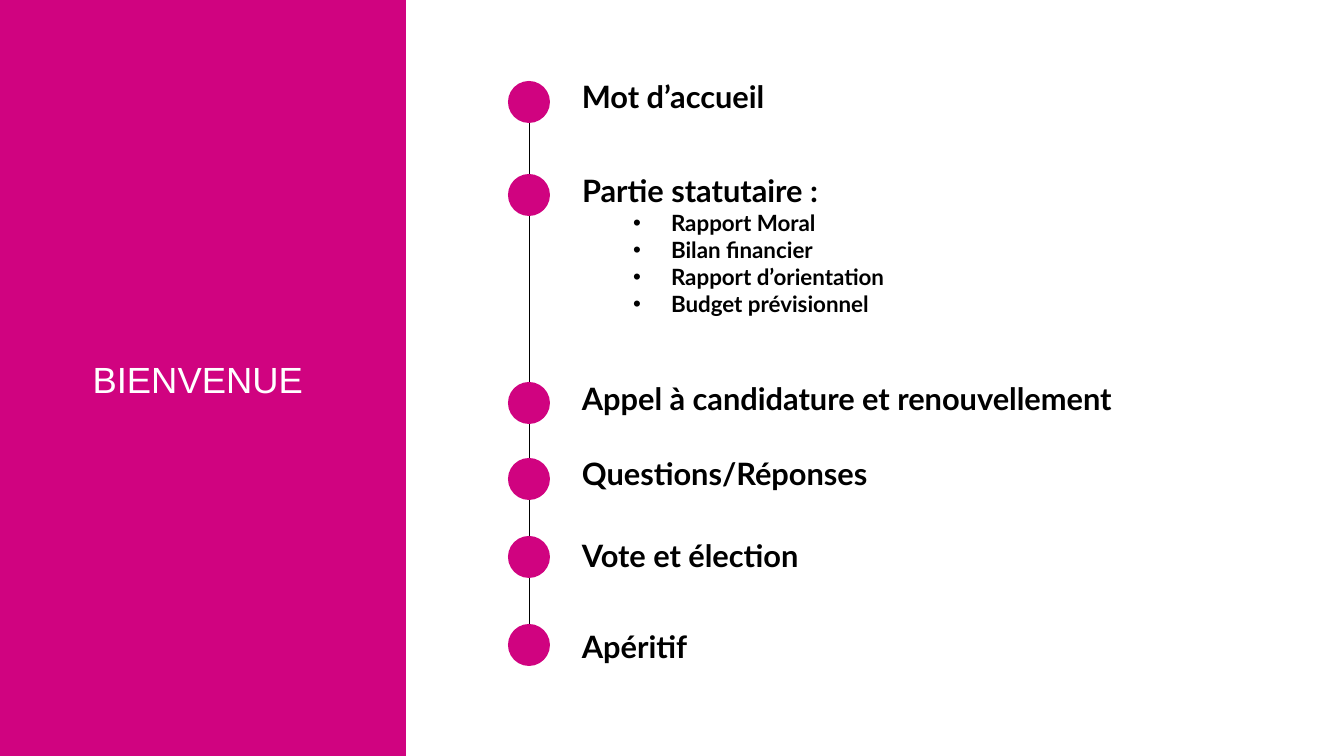
from dataclasses import dataclass

from lxml.etree import SubElement
from pptx import Presentation
from pptx.dml.color import RGBColor
from pptx.enum.shapes import MSO_CONNECTOR, MSO_SHAPE
from pptx.enum.text import MSO_ANCHOR, MSO_AUTO_SIZE, PP_ALIGN
from pptx.oxml.ns import qn
from pptx.shapes.autoshape import Shape
from pptx.slide import Slide
from pptx.text.text import _Paragraph as Paragraph
from pptx.util import Emu, Pt

MAGENTA = RGBColor(0xD0, 0x03, 0x80)
WHITE = RGBColor(0xFF, 0xFF, 0xFF)
BLACK = RGBColor(0x00, 0x00, 0x00)

SLIDE_WIDTH, SLIDE_HEIGHT = 1344, 756
PANEL_WIDTH = 406
DOT_LEFT, DOT_SIZE = 508, 42
TEXT_LEFT, TEXT_WIDTH = 572, 653
HEADING_HEIGHT, BULLET_HEIGHT = 33, 27
BULLET_MARGIN, BULLET_HANG = 89, 38


@dataclass(frozen=True)
class AgendaItem:
    heading: str
    dot_top: int
    text_top: int
    bullets: tuple[str, ...] = ()


AGENDA = (
    AgendaItem("Mot d’accueil", 81, 82),
    AgendaItem("Partie statutaire :", 174, 176, (
        "Rapport Moral", "Bilan financier",
        "Rapport d’orientation", "Budget prévisionnel")),
    AgendaItem("Appel à candidature et renouvellement", 382, 384),
    AgendaItem("Questions/Réponses", 458, 459),
    AgendaItem("Vote et élection", 536, 541),
    AgendaItem("Apéritif", 624, 632),
)


def px(length: int) -> Emu:
    return Emu(round(length * 914400 / 100.8))


def place(shape: Shape, left: int, top: int, width: int, height: int) -> None:
    shape.left, shape.top = px(left), px(top)
    shape.width, shape.height = px(width), px(height)


def add_filled(slide: Slide, kind: MSO_SHAPE, left: int, top: int,
               width: int, height: int) -> Shape:
    shape = slide.shapes.add_shape(kind, px(left), px(top), px(width), px(height))
    shape.shadow.inherit = False
    shape.fill.solid()
    shape.fill.fore_color.rgb = MAGENTA
    shape.line.fill.background()
    return shape


def prepare_frame(shape: Shape) -> None:
    frame = shape.text_frame
    frame.word_wrap = True
    frame.auto_size = MSO_AUTO_SIZE.NONE
    frame.vertical_anchor = MSO_ANCHOR.MIDDLE
    frame.margin_top = frame.margin_bottom = 0


def set_bullet(paragraph: Paragraph, bulleted: bool) -> None:
    properties = paragraph._p.get_or_add_pPr()
    properties.set("marL", str(px(BULLET_MARGIN) if bulleted else 0))
    properties.set("indent", str(-px(BULLET_HANG) if bulleted else 0))
    if bulleted:
        SubElement(properties, qn("a:buFont"), typeface="Arial")
        SubElement(properties, qn("a:buChar"), char="•")
    else:
        SubElement(properties, qn("a:buNone"))


def format_text(paragraph: Paragraph, font: str, size: int, color: RGBColor,
                bold: bool, spacing: float) -> None:
    paragraph.space_before = Pt(0)
    paragraph.line_spacing = spacing
    for run in paragraph.runs:
        run.font.name = font
        run.font.size = Pt(size)
        run.font.bold = bold
        run.font.color.rgb = color


def write_item(shape: Shape, item: AgendaItem) -> None:
    height = HEADING_HEIGHT + BULLET_HEIGHT * len(item.bullets)
    place(shape, TEXT_LEFT, item.text_top, TEXT_WIDTH, height)
    prepare_frame(shape)
    shape.text_frame.text = "\n".join((item.heading, *item.bullets))
    for index, paragraph in enumerate(shape.text_frame.paragraphs):
        bulleted = index > 0
        paragraph.level = int(bulleted)
        set_bullet(paragraph, bulleted)
        format_text(paragraph, "Lato", 16 if bulleted else 22, BLACK, True,
                    1.0 if bulleted else 0.9)


def add_timeline(slide: Slide) -> None:
    center = px(DOT_LEFT + DOT_SIZE // 2)
    line = slide.shapes.add_connector(
        MSO_CONNECTOR.STRAIGHT, center, px(107), center, px(627))
    line.line.color.rgb = BLACK
    line.line.width = Pt(0.5)
    SubElement(line.element.spPr, qn("a:effectLst"))
    for item in AGENDA:
        add_filled(slide, MSO_SHAPE.OVAL, DOT_LEFT, item.dot_top, DOT_SIZE, DOT_SIZE)


def main() -> None:
    presentation = Presentation()
    presentation.slide_width = px(SLIDE_WIDTH)
    presentation.slide_height = px(SLIDE_HEIGHT)
    slide = presentation.slides.add_slide(presentation.slide_layouts[1])

    # Side panel, kept behind the title
    title, body = slide.shapes.title, slide.placeholders[1]
    panel = add_filled(slide, MSO_SHAPE.RECTANGLE, 0, 0, PANEL_WIDTH, SLIDE_HEIGHT)
    title.element.addprevious(panel.element)
    place(title, 27, 357, 342, 50)
    prepare_frame(title)
    title.text_frame.text = "BIENVENUE"
    heading = title.text_frame.paragraphs[0]
    heading.alignment = PP_ALIGN.CENTER
    format_text(heading, "Arial", 26, WHITE, False, 0.9)

    # Timeline and agenda; the item with a list uses the body placeholder
    add_timeline(slide)
    for item in AGENDA:
        shape = body if item.bullets else slide.shapes.add_textbox(0, 0, 0, 0)
        write_item(shape, item)

    presentation.save("out.pptx")


if __name__ == "__main__":
    main()
